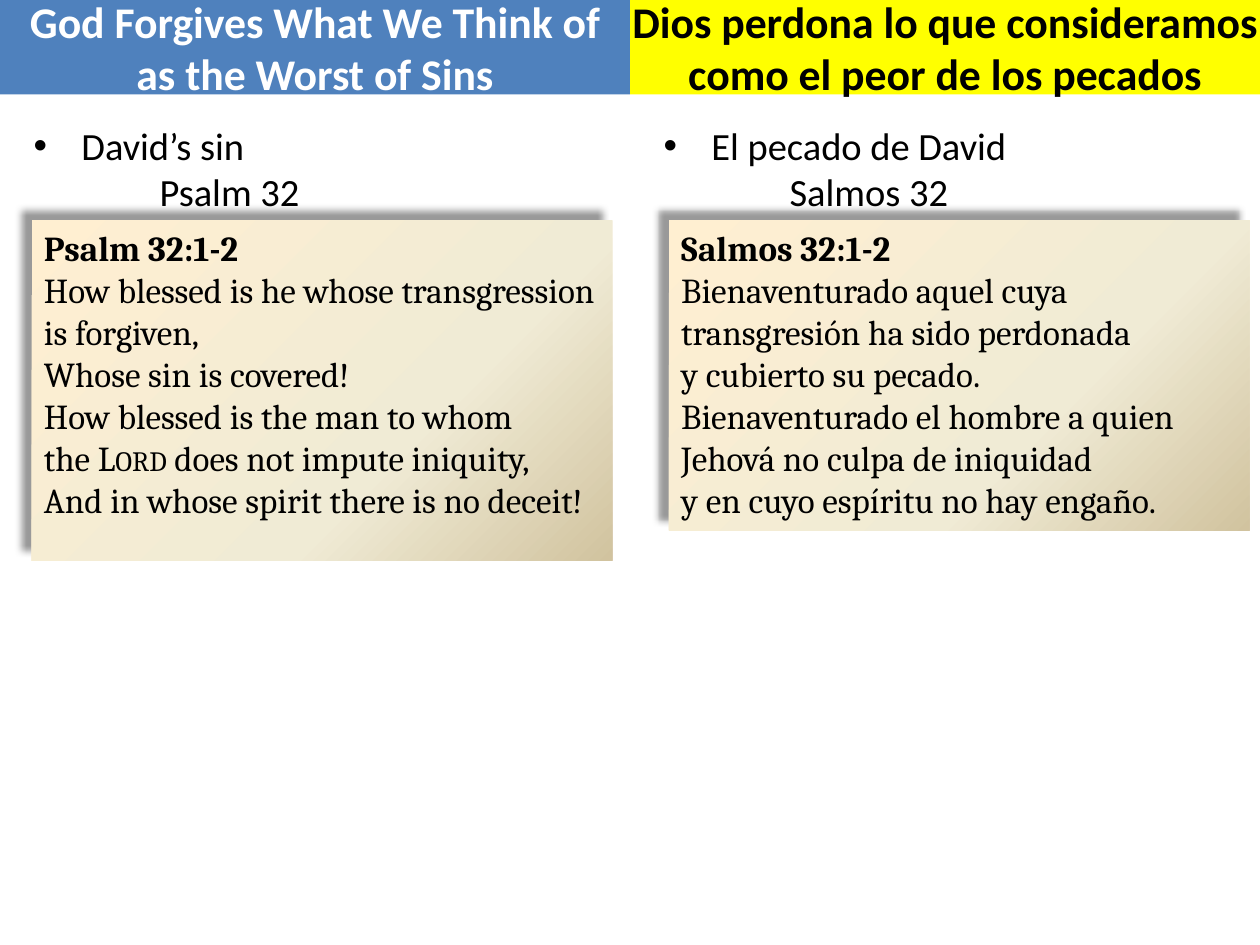
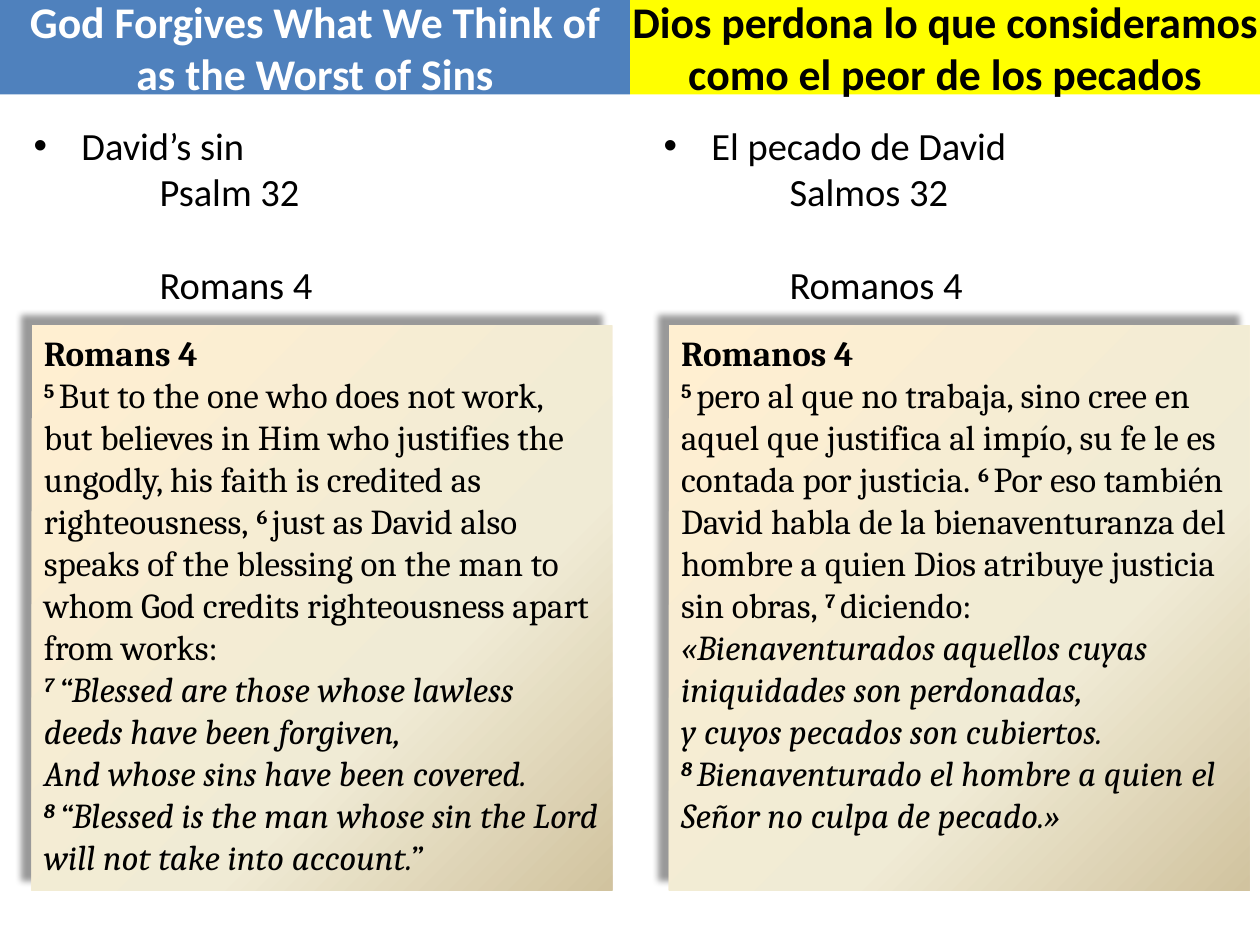
from dataclasses import dataclass

from lxml.etree import SubElement
from pptx import Presentation
from pptx.dml.color import RGBColor
from pptx.enum.shapes import MSO_SHAPE
from pptx.enum.text import MSO_ANCHOR, MSO_AUTO_SIZE, PP_ALIGN
from pptx.oxml.ns import qn
from pptx.util import Inches, Pt


@dataclass(frozen=True)
class Theme:
    heading_font: str = "Calibri"
    scripture_font: str = "Cambria"
    heading_size: float = 25
    list_size: float = 22
    scripture_size: float = 20
    list_gap: float = 26.8
    ink: str = "000000"
    paper: str = "FFFFFF"
    english_band: str = "4F81BD"
    spanish_band: str = "FFFF00"
    parchment: tuple = ((0, "FFEFD1"), (65, "F0EBD5"), (100, "D1C39F"))


THEME = Theme()
COLUMNS, ROWS = 120, 90
COMPARISON_LAYOUT = 4
BOLD = {"bold": True}
VERSE = {"bold": True, "raised": True}
ITALIC = {"italic": True}
ITALIC_VERSE = VERSE | ITALIC


@dataclass(frozen=True)
class Language:
    """What one half of every slide repeats, with its places on the grid."""
    heading: str
    band: str
    heading_ink: str
    side_inset: float
    heading_slot: int
    list_slot: int
    left: float
    list_width: float
    scripture_left: float
    topic: str


ENGLISH = Language("God Forgives What We Think of as the Worst of Sins",
                   THEME.english_band, THEME.paper, 0.1, 0, 2, 0, 58, 3, "David’s sin")
SPANISH = Language("Dios perdona lo que consideramos como el peor de los pecados",
                   THEME.spanish_band, THEME.ink, 0, 1, 4, 60, 56, 63.7, "El pecado de David")


def write(para, text, font=THEME.scripture_font, size=THEME.scripture_size, color=THEME.ink,
          bold=False, italic=False, raised=False, small_caps=False):
    """Add formatted text; "~" is a no-break space and a newline is a line break."""
    for number, line in enumerate(text.replace("~", chr(160)).split("\n")):
        if number:
            para.add_line_break()
        if not line:
            continue
        span = para.add_run()
        span.text = line
        span.font.name, span.font.size = font, Pt(size)
        span.font.bold, span.font.italic = bold, italic
        span.font.color.rgb = RGBColor.from_string(color)
        properties = span.font._element
        if raised:
            properties.set("baseline", "30000")
        if small_caps:
            properties.set("cap", "small")


def add_color(parent, color):
    return SubElement(parent, qn("a:srgbClr"), val=color)


class Page:
    def __init__(self, deck, theme):
        self.theme = theme
        self.column = deck.slide_width / COLUMNS
        self.row = deck.slide_height / ROWS
        self.slide = deck.slides.add_slide(deck.slide_layouts[COMPARISON_LAYOUT])

    def area(self, left, top, width, height):
        return (round(left * self.column), round(top * self.row),
                round(width * self.column), round(height * self.row))

    def placeholder(self, slot, *area):
        box = next(p for p in self.slide.placeholders if p.placeholder_format.idx == slot)
        box.left, box.top, box.width, box.height = self.area(*area)
        return box

    def set_frame(self, box, anchor, side_inset=0.1):
        frame = box.text_frame
        frame.word_wrap = True
        frame.auto_size = MSO_AUTO_SIZE.NONE
        frame.vertical_anchor = anchor
        frame.margin_left = frame.margin_right = Inches(side_inset)
        frame.margin_top = frame.margin_bottom = Inches(0.05)
        return frame

    def paragraphs(self, frame, count, align=PP_ALIGN.LEFT):
        for number in range(count):
            para = frame.add_paragraph() if number else frame.paragraphs[0]
            para.alignment = align
            para.line_spacing = 1.0
            para.space_before = para.space_after = Pt(0)
            yield para

    def heading(self, language):
        box = self.placeholder(language.heading_slot, language.left, 0, COLUMNS / 2, 9)
        box.fill.solid()
        box.fill.fore_color.rgb = RGBColor.from_string(language.band)
        frame = self.set_frame(box, MSO_ANCHOR.MIDDLE, language.side_inset)
        for para in self.paragraphs(frame, 1, PP_ALIGN.CENTER):
            write(para, language.heading, font=self.theme.heading_font,
                  size=self.theme.heading_size, color=language.heading_ink, bold=True)

    def outline(self, language, passages):
        """Bulleted topic with its passages indented below, a line apart."""
        box = self.placeholder(language.list_slot, language.left + 2, 11,
                               language.list_width, 1 + 9 * len(passages))
        frame = self.set_frame(box, MSO_ANCHOR.TOP)
        lines = [language.topic, *passages]
        for number, (para, line) in enumerate(zip(self.paragraphs(frame, len(lines)), lines)):
            if number > 1:
                para.space_before = Pt(self.theme.list_gap)
            properties = para._p.get_or_add_pPr()
            margin, indent = (1, 0) if number else (0.38, -0.38)
            properties.set("marL", str(Inches(margin)))
            properties.set("indent", str(Inches(indent)))
            if number:
                SubElement(properties, qn("a:buNone"))
            else:
                SubElement(properties, qn("a:buFont"), typeface="Arial")
                SubElement(properties, qn("a:buChar"), char="•")
            write(para, line, font=self.theme.heading_font, size=self.theme.list_size)

    def scripture(self, language, top, height, paragraphs):
        box = self.slide.shapes.add_shape(
            MSO_SHAPE.RECTANGLE, *self.area(language.scripture_left, top, 55.3, height))
        box.line.fill.background()
        self.parchment_fill(box)
        self.cast_shadow(box)
        frame = self.set_frame(box, MSO_ANCHOR.TOP)
        for para, spans in zip(self.paragraphs(frame, len(paragraphs)), paragraphs):
            for text, style in spans:
                write(para, text, **style)

    def parchment_fill(self, box):
        box.fill.gradient()
        box.fill.gradient_angle = 315
        stops = box._element.spPr.find(".//" + qn("a:gsLst"))
        for stop in list(stops):
            stops.remove(stop)
        for share, color in self.theme.parchment:
            add_color(SubElement(stops, qn("a:gs"), pos=str(share * 1000)), color)

    def cast_shadow(self, box):
        box.shadow.inherit = False
        effects = box._element.spPr.find(qn("a:effectLst"))
        shadow = SubElement(effects, qn("a:outerShdw"), blurRad=str(Pt(4)), dist=str(Pt(8)),
                            dir=str(225 * 60000), algn="br", rotWithShape="0")
        SubElement(add_color(shadow, self.theme.ink), qn("a:alpha"), val="40000")

    def remove_empty_placeholders(self):
        for box in list(self.slide.placeholders):
            if not box.text_frame.text:
                box._element.getparent().remove(box._element)


PSALM_ENGLISH = [
    [("Psalm 32:1-2", BOLD)],
    [("How blessed is he whose transgression is forgiven,\nWhose sin is covered!\n"
      "How blessed is the man to whom the~", {}),
     ("Lord", {"small_caps": True}),
     ("~does not impute iniquity,\nAnd in whose spirit there is~no deceit!", {})],
]
PSALM_SPANISH = [
    [("Salmos 32:1-2", BOLD)],
    [("Bienaventurado aquel cuya transgresión ha sido perdonada\ny cubierto su pecado.\n"
      "Bienaventurado el hombre a quien Jehová no culpa de iniquidad\n"
      "y en cuyo espíritu no hay engaño.", {})],
]
ROMANS_ENGLISH = [
    [("Romans 4", BOLD)],
    [("5~", VERSE),
     ("But to the one who does not work, but~believes in Him who justifies the ungodly, "
      "his faith is credited as righteousness,~", {}),
     ("6~", VERSE),
     ("just as David also speaks of the blessing on the man to whom God credits "
      "righteousness apart from works:", {})],
    [("7~", ITALIC_VERSE),
     ("“Blessed are those whose lawless deeds have been forgiven,\n"
      "And whose sins have been covered.\n", ITALIC),
     ("8~", ITALIC_VERSE),
     ("“Blessed is the man whose sin the Lord will not~take into account.”", ITALIC)],
]
ROMANS_SPANISH = [
    [("Romanos 4", BOLD)],
    [("5~", VERSE),
     ("pero al que no trabaja, sino cree en aquel que justifica al impío, "
      "su fe le es contada por justicia.~", {}),
     ("6~", VERSE),
     ("Por eso también David habla de la bienaventuranza del hombre a quien Dios "
      "atribuye justicia sin obras,~", {}),
     ("7~", VERSE),
     ("diciendo:", {})],
    [("«Bienaventurados aquellos cuyas iniquidades son perdonadas,\n"
      "y cuyos pecados son cubiertos.\n", ITALIC),
     ("8~", ITALIC_VERSE),
     ("Bienaventurado el hombre a quien el Señor no culpa de pecado.»", ITALIC)],
]

# Each slide: top row of the scripture, then language, passages, scripture height and text.
SLIDES = [
    (21, [(ENGLISH, ["Psalm 32"], 32.4, PSALM_ENGLISH),
          (SPANISH, ["Salmos 32"], 29.5, PSALM_SPANISH)]),
    (31, [(ENGLISH, ["Psalm 32", "Romans 4"], 53.8, ROMANS_ENGLISH),
          (SPANISH, ["Salmos 32", "Romanos 4"], 53.8, ROMANS_SPANISH)]),
]


def main():
    deck = Presentation()
    deck.slide_width, deck.slide_height = Inches(10), Inches(7.5)
    for scripture_top, halves in SLIDES:
        page = Page(deck, THEME)
        for language, passages, height, verses in halves:
            page.heading(language)
            page.outline(language, passages)
            page.scripture(language, scripture_top, height, verses)
        page.remove_empty_placeholders()
    deck.save("out.pptx")


if __name__ == "__main__":
    main()
